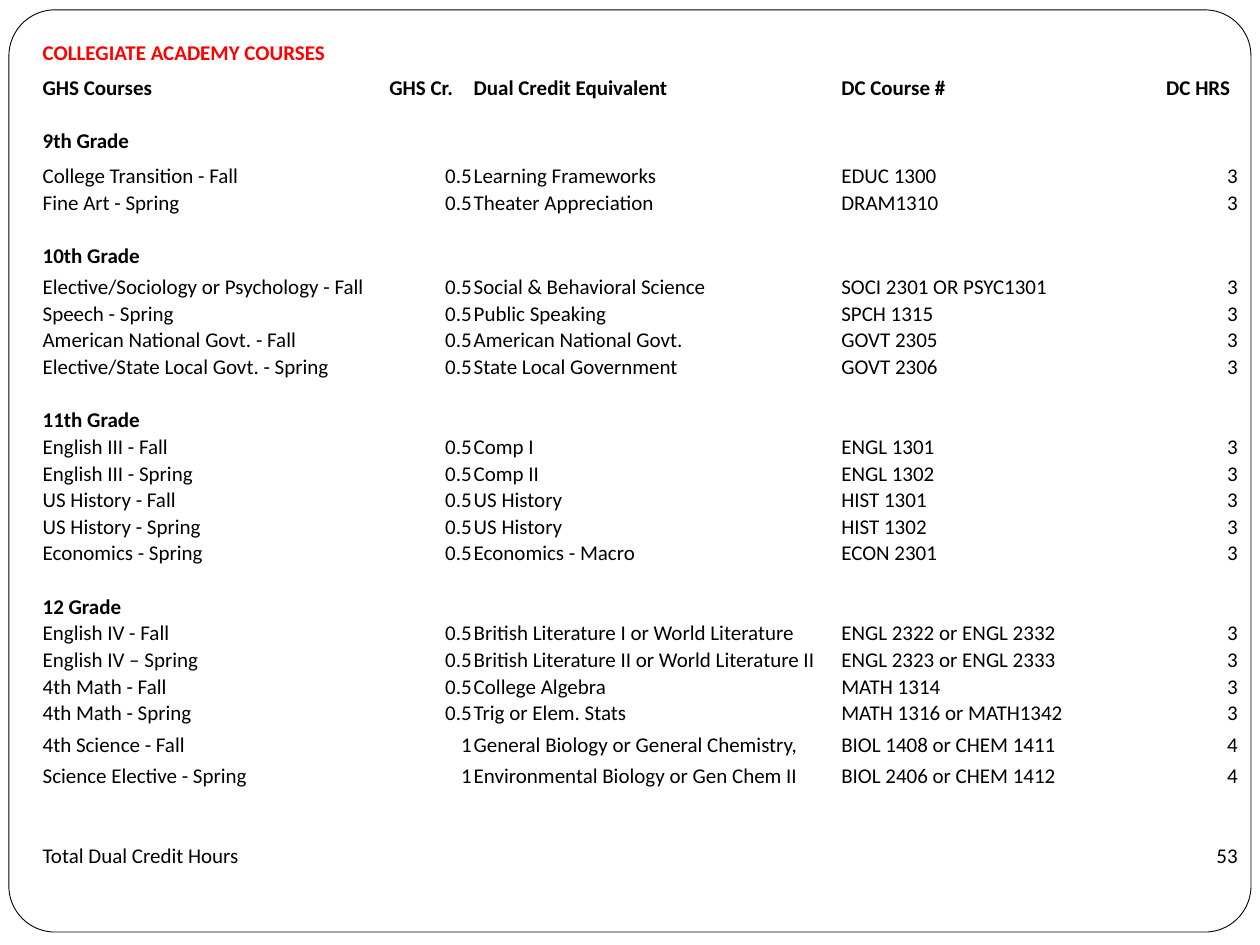
from dataclasses import dataclass

from lxml.etree import SubElement
from pptx import Presentation
from pptx.dml.color import RGBColor
from pptx.enum.shapes import MSO_SHAPE
from pptx.enum.text import MSO_ANCHOR, PP_ALIGN
from pptx.oxml.ns import qn
from pptx.util import Cm, Pt

FONT = "Calibri"
TEXT_SIZE = 12
BLACK, WHITE, RED = "000000", "FFFFFF", "FF0000"
NORMAL, MEDIUM, TALL = 0.48, 0.63, 0.7
COLUMN_WIDTHS = (6.99, 1.7, 7.41, 6.55, 1.48)
NUMBER_COLUMNS = (1, 4)
NO_STYLE_NO_GRID = "{2D5ABB26-0587-4C30-8999-92F81FD0307C}"


@dataclass
class Row:
    texts: tuple[str, ...] = ()
    height: float = NORMAL
    bold: bool = False
    color: str = BLACK


def heading(*texts: str, height: float = NORMAL, color: str = BLACK) -> Row:
    return Row(texts, height, True, color)


def course(name: str, equivalent: str, number: str, credit: str = "0.5",
           hours: str = "3", height: float = NORMAL) -> Row:
    return Row((name, credit, equivalent, number, hours), height)


ROWS = [
    heading("COLLEGIATE ACADEMY COURSES", height=TALL, color=RED),
    heading("GHS Courses", "GHS Cr.", "Dual Credit Equivalent", "DC Course #", "DC HRS",
            height=TALL),
    Row(),
    heading("9th Grade"),
    course("College Transition - Fall", "Learning Frameworks", "EDUC 1300", height=TALL),
    course("Fine Art - Spring", "Theater Appreciation", "DRAM1310"),
    Row(),
    heading("10th Grade"),
    course("Elective/Sociology or Psychology - Fall", "Social & Behavioral Science",
           "SOCI 2301 OR PSYC1301", height=MEDIUM),
    course("Speech - Spring", "Public Speaking", "SPCH 1315"),
    course("American National Govt. - Fall", "American National Govt.", "GOVT 2305"),
    course("Elective/State Local Govt. - Spring", "State Local Government", "GOVT 2306"),
    Row(),
    heading("11th Grade"),
    course("English III - Fall", "Comp I", "ENGL 1301"),
    course("English III - Spring", "Comp II", "ENGL 1302"),
    course("US History - Fall", "US History", "HIST 1301"),
    course("US History - Spring", "US History", "HIST 1302"),
    course("Economics - Spring", "Economics - Macro", "ECON 2301"),
    Row(),
    heading("12 Grade"),
    course("English IV - Fall", "British Literature I or World Literature",
           "ENGL 2322 or ENGL 2332"),
    course("English IV – Spring", "British Literature II or World Literature II",
           "ENGL 2323 or ENGL 2333"),
    course("4th Math - Fall", "College Algebra", "MATH 1314"),
    course("4th Math - Spring", "Trig or Elem. Stats", "MATH 1316 or MATH1342"),
    course("4th Science - Fall", "General Biology or General Chemistry,",
           "BIOL 1408 or CHEM 1411", "1", "4", MEDIUM),
    course("Science Elective - Spring", "Environmental Biology or Gen Chem II",
           "BIOL 2406 or CHEM 1412", "1", "4", MEDIUM),
    Row(),
    Row(),
    Row(("Total Dual Credit Hours", "", "", "", "53")),
]


def rgb(color: str) -> RGBColor:
    return RGBColor.from_string(color)


def draw_border(page) -> None:
    border = page.shapes.add_shape(MSO_SHAPE.ROUNDED_RECTANGLE,
                                   Cm(0.18), Cm(0.2), Cm(25.04), Cm(18.59))
    border.adjustments[0] = 0.05
    border.shadow.inherit = False
    border.fill.solid()
    border.fill.fore_color.rgb = rgb(WHITE)
    border.line.color.rgb = rgb(BLACK)
    border.line.width = Pt(0.5)


def fill_cell(cell, text: str, row: Row, is_number: bool) -> None:
    cell.fill.background()
    cell.vertical_anchor = MSO_ANCHOR.BOTTOM
    cell.margin_left = cell.margin_right = cell.margin_top = Cm(0.02)
    cell.margin_bottom = Cm(0)
    para = cell.text_frame.paragraphs[0]
    if not text:
        # The end mark sets the line height of an empty cell.
        SubElement(para._p, qn("a:endParaRPr"), sz=str(TEXT_SIZE * 100))
        return
    if is_number:
        para.alignment = PP_ALIGN.RIGHT
    span = para.add_run()
    span.text = text
    span.font.name = FONT
    span.font.size = Pt(TEXT_SIZE)
    span.font.bold = row.bold
    span.font.color.rgb = rgb(row.color)


def draw_courses(page) -> None:
    frame = page.shapes.add_table(len(ROWS), len(COLUMN_WIDTHS), Cm(0.84), Cm(0.64),
                                  Cm(sum(COLUMN_WIDTHS)), Cm(16.64))
    table = frame.table
    table.first_row = table.horz_banding = False
    table._tbl.tblPr.find(qn("a:tableStyleId")).text = NO_STYLE_NO_GRID
    for column, width in zip(table.columns, COLUMN_WIDTHS):
        column.width = Cm(width)
    for table_row, row in zip(table.rows, ROWS):
        table_row.height = Cm(row.height)
        for index, cell in enumerate(table_row.cells):
            text = row.texts[index] if index < len(row.texts) else ""
            fill_cell(cell, text, row, index in NUMBER_COLUMNS and not row.bold)


def main() -> None:
    deck = Presentation()
    deck.slide_width, deck.slide_height = Cm(25.4), Cm(19.05)
    page = deck.slides.add_slide(deck.slide_layouts[6])
    draw_border(page)
    draw_courses(page)
    deck.save("out.pptx")


if __name__ == "__main__":
    main()
